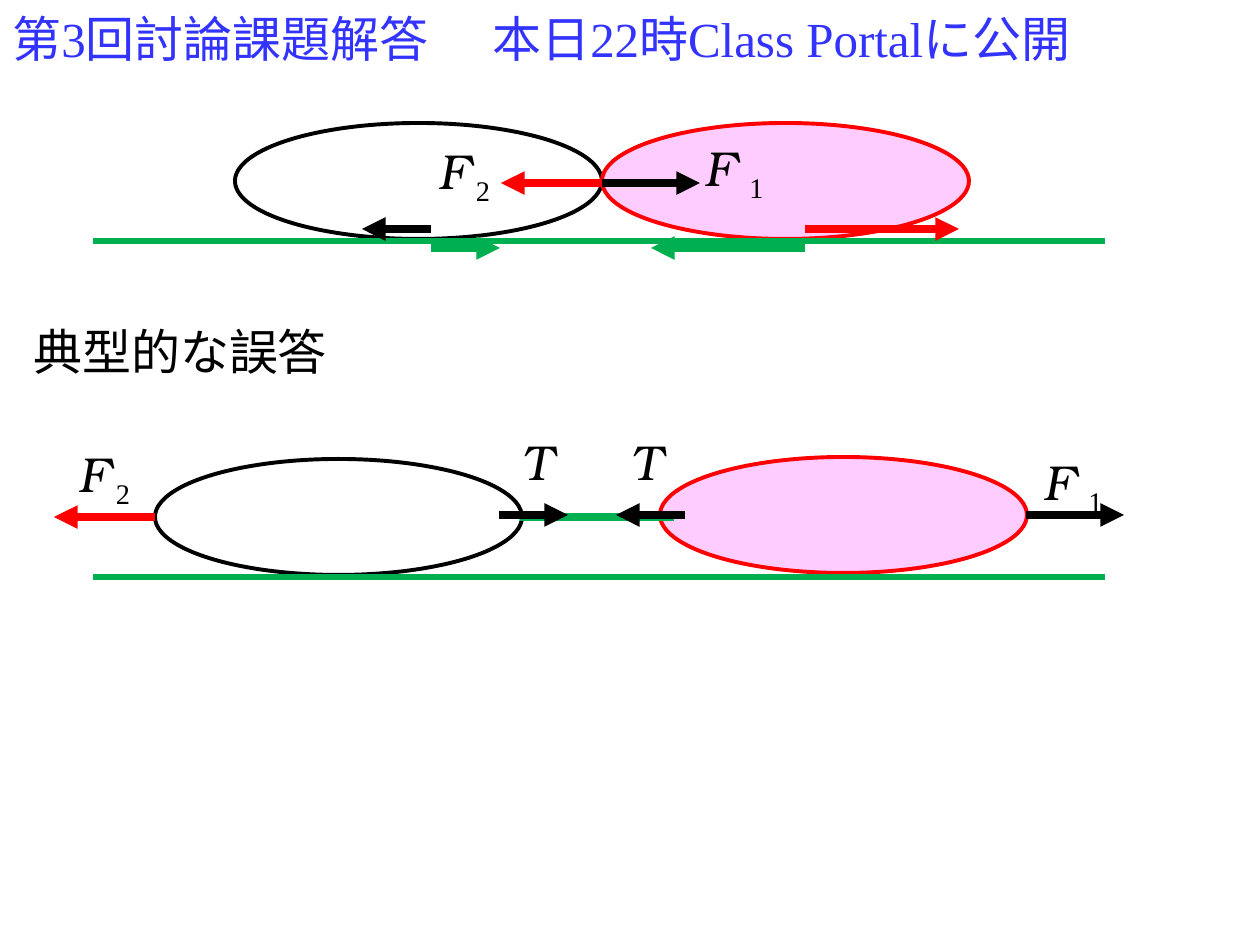
from lxml import etree
from pptx import Presentation
from pptx.dml.color import RGBColor
from pptx.enum.shapes import MSO_CONNECTOR, MSO_SHAPE
from pptx.enum.text import MSO_ANCHOR
from pptx.oxml.ns import qn
from pptx.util import Emu, Pt

LINE = MSO_CONNECTOR.STRAIGHT
OVAL = MSO_SHAPE.OVAL
MIDDLE, TOP = MSO_ANCHOR.MIDDLE, MSO_ANCHOR.TOP
SERIF, MATH = "Times New Roman", "TeX Gyre Bonum"
COLORS = {"title": "3333FF", "black": "000000", "red": "FF0000",
          "green": "00B050", "white": "FFFFFF", "pink": "FFCCFF"}
OVAL_W, OVAL_H = 367, 116
LABEL_H = 72


def px(n):
    return Emu(round(n * 914400 / 126))


def rgb(name):
    return RGBColor.from_string(COLORS[name])


def add_text(s, x, y, w, h, runs, color="black", anchor=TOP):
    tf = s.shapes.add_textbox(px(x), px(y), px(w), px(h)).text_frame
    tf.word_wrap = True
    tf.vertical_anchor = anchor
    p = tf.paragraphs[0]
    for text, font, italic, baseline in runs:
        r = p.add_run()
        r.text = text
        r.font.name = font
        r.font.size = Pt(28)
        r.font.italic = italic
        r.font.color.rgb = rgb(color)
        if baseline:
            r.font._element.set("baseline", str(baseline))


def add_plain(s, x, y, w, h, text, color="black", anchor=TOP):
    add_text(s, x, y, w, h, [(text, SERIF, False, 0)], color, anchor)


def add_symbol(s, x, y, w, letter, index=""):
    runs = [(letter, MATH, True, 0)]
    if index:
        runs.append((index, SERIF, False, -25000))
    add_text(s, x, y, w, LABEL_H, runs)


def add_oval(s, x, y, fill, line):
    sp = s.shapes.add_shape(OVAL, px(x), px(y), px(OVAL_W), px(OVAL_H))
    sp.shadow.inherit = False
    sp.fill.solid()
    sp.fill.fore_color.rgb = rgb(fill)
    sp.line.color.rgb = rgb(line)
    sp.line.width = Pt(2.25)


def add_line(s, x1, x2, y, color, width=4.5, arrow=True):
    c = s.shapes.add_connector(LINE, px(x1), px(y), px(x2), px(y))
    c.line.color.rgb = rgb(color)
    c.line.width = Pt(width)
    if arrow:
        ln = c.line._get_or_add_ln()
        etree.SubElement(ln, qn("a:tailEnd")).set("type", "triangle")
    etree.SubElement(c._element.spPr, qn("a:effectLst"))


def add_heading(s, x, y, w, h):
    add_plain(s, x, y, w, h, "第3回討論課題解答", "title", MIDDLE)
    add_plain(s, x + 480, y, 709, h, "本日22時Class Portalに公開",
              "title", MIDDLE)


def add_contact_diagram(s, x, y, w):
    touch = x + 509
    add_oval(s, touch - OVAL_W, y, "white", "black")
    add_oval(s, touch, y, "pink", "red")
    add_line(s, touch, touch - 101, y + 60, "red")
    add_line(s, touch, touch + 98, y + 60, "black")
    add_line(s, x, x + w, y + 118, "green", 3, False)
    for start, reach, color in ((338, -69, "black"), (712, 154, "red")):
        add_line(s, x + start, x + start - reach, y + 125, "green")
        add_line(s, x + start, x + start + reach, y + 106, color)
    add_symbol(s, x + 599, y + 8, 89, "F ", "1")
    add_symbol(s, x + 333, y + 11, 110, "F", " 2")


def add_rope_diagram(s, x, y, w):
    add_oval(s, x + 101, y + 34, "white", "black")
    add_oval(s, x + 606, y + 32, "pink", "red")
    add_line(s, x + 101, x, y + 92, "red")
    add_line(s, x + 972, x + w, y + 90, "black")
    add_line(s, x + 39, x + 1051, y + 152, "green", 3, False)
    add_line(s, x + 466, x + 620, y + 92, "green", arrow=False)
    add_line(s, x + 631, x + 562, y + 90, "black")
    add_line(s, x + 445, x + 514, y + 90, "black")
    add_symbol(s, x + 977, y + 20, 89, "F ", "1")
    add_symbol(s, x + 12, y + 12, 110, "F", " 2")
    for left in (456, 565):
        add_symbol(s, x + left, y, 89, "T")


def main():
    prs = Presentation()
    prs.slide_width, prs.slide_height = px(1260), px(945)
    s = prs.slides.add_slide(prs.slide_layouts[6])
    add_heading(s, 0, 0, 1260, 76)
    add_contact_diagram(s, 93, 123, 1012)
    add_plain(s, 21, 315, 404, LABEL_H, "典型的な誤答")
    add_rope_diagram(s, 54, 425, 1070)
    prs.save("out.pptx")


if __name__ == "__main__":
    main()
